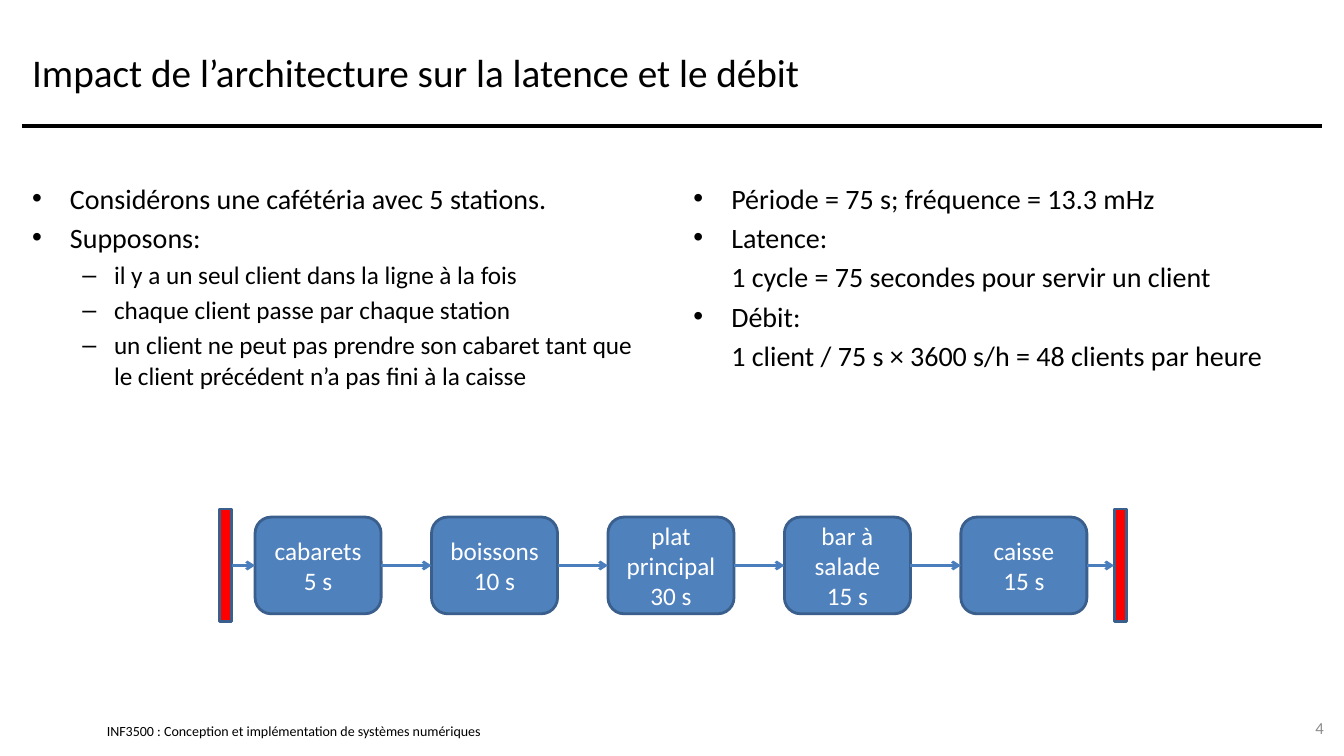
"""Build the slide on how architecture affects latency and throughput."""
from lxml import etree
from pptx import Presentation
from pptx.dml.color import RGBColor
from pptx.enum.shapes import MSO_CONNECTOR, MSO_SHAPE
from pptx.enum.text import MSO_ANCHOR, PP_ALIGN
from pptx.oxml.ns import qn
from pptx.util import Inches, Pt

STRAIGHT = MSO_CONNECTOR.STRAIGHT
RECTANGLE, ROUNDED = MSO_SHAPE.RECTANGLE, MSO_SHAPE.ROUNDED_RECTANGLE
TOP, MIDDLE = MSO_ANCHOR.TOP, MSO_ANCHOR.MIDDLE
LEFT, CENTER, RIGHT = PP_ALIGN.LEFT, PP_ALIGN.CENTER, PP_ALIGN.RIGHT

FONT = "Calibri"
BLACK, WHITE, GRAY = "000000", "FFFFFF", "8C8C8C"
BLUE, OUTLINE, ARROW, RED = "4F81BD", "3A5F8C", "4B7EBC", "FF0000"

TITLE = "Impact de l’architecture sur la latence et le débit"
FOOTER = "INF3500 : Conception et implémentation de systèmes numériques"
PAGE = "4"
STYLES = {
    "point": ("•", 3 / 8, -3 / 8, 20),
    "detail": ("–", 13 / 16, -5 / 16, 18),
    "suite": (None, 3 / 8, 0, 20),
}
ASSUMPTIONS = [
    ("point", "Considérons une cafétéria avec 5 stations."),
    ("point", "Supposons:"),
    ("detail", "il y a un seul client dans la ligne à la fois"),
    ("detail", "chaque client passe par chaque station"),
    ("detail", "un client ne peut pas prendre son cabaret tant que "
               "le client précédent n’a pas fini à la caisse"),
]
RESULTS = [
    ("point", "Période = 75 s; fréquence = 13.3 mHz"),
    ("point", "Latence:"),
    ("suite", "1 cycle = 75 secondes pour servir un client"),
    ("point", "Débit:"),
    ("suite", "1 client / 75 s × 3600 s/h = 48 clients par heure"),
]
STATIONS = [("cabarets", 5), ("boissons", 10), ("plat principal", 30),
            ("bar à salade", 15), ("caisse", 15)]

STATION_LEFT, STATION_PITCH = 2.53, 1.75
STATION_WIDTH, STATION_HEIGHT = 1.25, 0.96
GATE_LEFTS, GATE_WIDTH, GATE_HEIGHT = (2.18, 11.05), 0.12, 1.12
FLOW_Y = 5.61


def color(code):
    return RGBColor.from_string(code)


def format_runs(paragraph, size, code, align=LEFT):
    paragraph.alignment = align
    for run in paragraph.runs:
        run.font.name = FONT
        run.font.size = Pt(size)
        run.font.color.rgb = color(code)


def fill_frame(frame, text, size, code, align, anchor):
    frame.word_wrap = True
    frame.vertical_anchor = anchor
    frame.text = text
    for paragraph in frame.paragraphs:
        format_runs(paragraph, size, code, align)


def add_text(slide, box, text, size, code=BLACK, align=LEFT, anchor=MIDDLE):
    frame = slide.shapes.add_textbox(*map(Inches, box)).text_frame
    fill_frame(frame, text, size, code, align, anchor)
    return frame


def add_list(slide, box, items):
    text = "\n".join(line for style, line in items)
    frame = add_text(slide, box, text, 20, anchor=TOP)
    for index, (paragraph, (style, line)) in enumerate(zip(frame.paragraphs, items)):
        bullet, margin, indent, size = STYLES[style]
        properties = paragraph._p.get_or_add_pPr()
        properties.set("marL", str(Inches(margin)))
        properties.set("indent", str(Inches(indent)))
        if bullet:
            etree.SubElement(properties, qn("a:buFont")).set("typeface", "Arial")
            etree.SubElement(properties, qn("a:buChar")).set("char", bullet)
        else:
            etree.SubElement(properties, qn("a:buNone"))
        if style == "detail":
            paragraph.level = 1
        if index:
            paragraph.space_before = Pt(0.2 * size)
        format_runs(paragraph, size, BLACK)


def add_block(slide, kind, left, width, height, fill, text=""):
    box = (left, FLOW_Y - height / 2, width, height)
    shape = slide.shapes.add_shape(kind, *map(Inches, box))
    shape.shadow.inherit = False
    shape.fill.solid()
    shape.fill.fore_color.rgb = color(fill)
    shape.line.color.rgb = color(OUTLINE)
    shape.line.width = Pt(2)
    if text:
        frame = shape.text_frame
        frame.margin_top = frame.margin_bottom = 0
        fill_frame(frame, text, 18, WHITE, CENTER, MIDDLE)


def add_line(slide, start, end, y, code, width, arrow=False):
    ends = map(Inches, (start, y, end, y))
    connector = slide.shapes.add_connector(STRAIGHT, *ends)
    connector.line.color.rgb = color(code)
    connector.line.width = Pt(width)
    if arrow:
        line = connector.line._get_or_add_ln()
        etree.SubElement(line, qn("a:tailEnd")).set("type", "arrow")
    etree.SubElement(connector._element.spPr, qn("a:effectLst"))


def add_flow(slide):
    lefts = [STATION_LEFT + STATION_PITCH * i for i in range(len(STATIONS))]
    for left, (name, seconds) in zip(lefts, STATIONS):
        add_block(slide, ROUNDED, left, STATION_WIDTH, STATION_HEIGHT, BLUE,
                  f"{name}\n{seconds} s")
    for left in GATE_LEFTS:
        add_block(slide, RECTANGLE, left, GATE_WIDTH, GATE_HEIGHT, RED)
    starts = [GATE_LEFTS[0] + GATE_WIDTH] + [left + STATION_WIDTH for left in lefts]
    for start, end in zip(starts, lefts + [GATE_LEFTS[1]]):
        add_line(slide, start, end, FLOW_Y, ARROW, 2, arrow=True)


def main():
    presentation = Presentation()
    presentation.slide_width = Inches(13.33)
    presentation.slide_height = Inches(7.5)
    slide = presentation.slides.add_slide(presentation.slide_layouts[6])
    footer = add_text(slide, (1.06, 7.17, 5.11, 0.17), FOOTER, 10)
    footer.margin_left = footer.margin_right = 0
    footer.margin_top = footer.margin_bottom = 0
    add_line(slide, 0.22, 13.11, 1.25, BLACK, 3)
    add_text(slide, (0.22, 0.17, 12.89, 1.08), TITLE, 28)
    for left, items in ((0.22, ASSUMPTIONS), (6.78, RESULTS)):
        add_list(slide, (left, 1.75, 6.33, 5.08), items)
    add_text(slide, (12.56, 7.02, 0.67, 0.4), PAGE, 12, GRAY, RIGHT)
    add_flow(slide)
    presentation.save("out.pptx")


if __name__ == "__main__":
    main()
